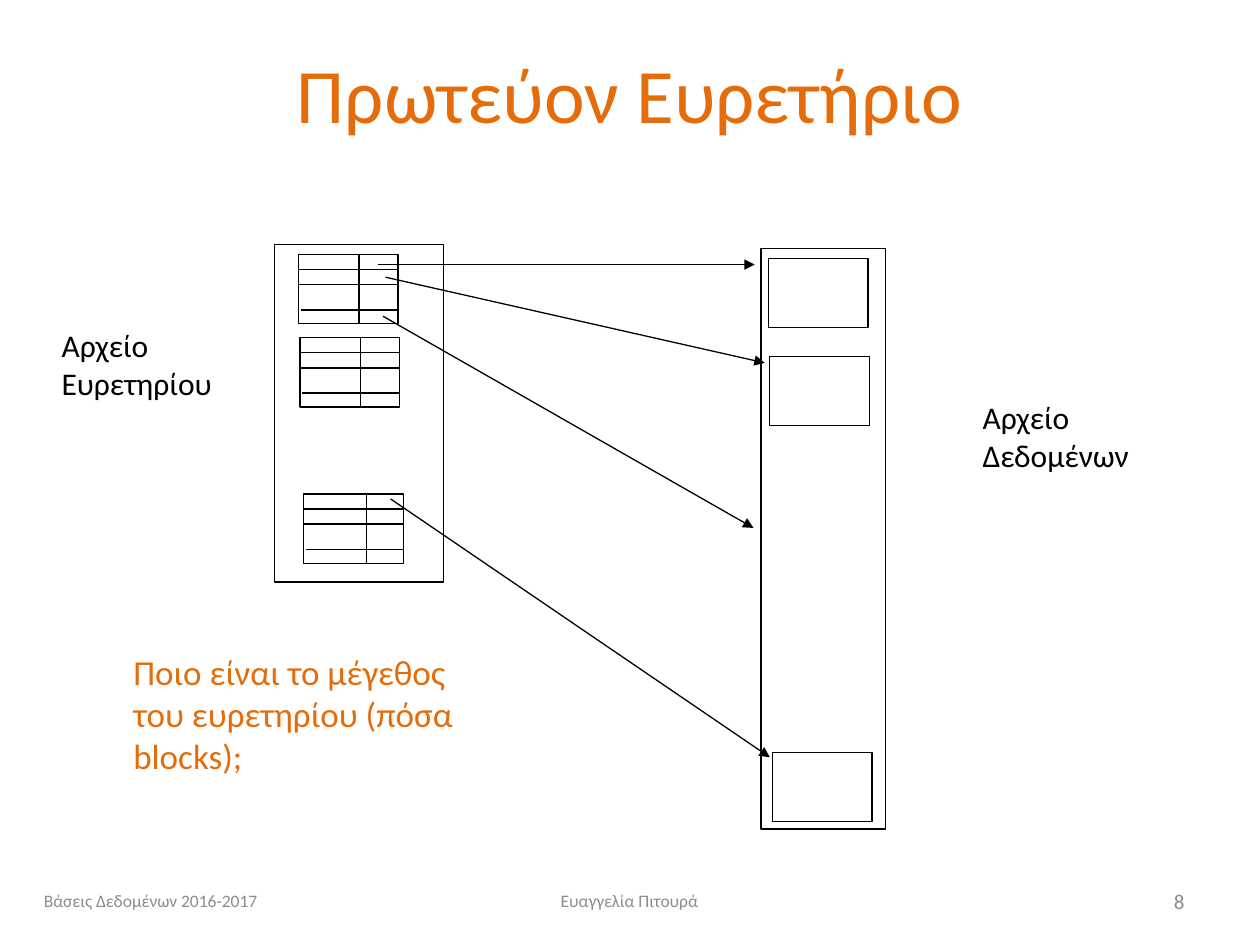
import pptx
import pptx.util
import pptx.dml.color
import pptx.enum.shapes
import pptx.enum.text
import pptx.oxml.ns
import pptx.oxml.xmlchemy
from pptx.util import Inches

COLORS = {"ink": "000000", "accent": "E46C0A", "footer": "8C8C8C"}
ALIGN = pptx.enum.text.PP_ALIGN
ANCHOR = pptx.enum.text.MSO_ANCHOR
BLOCK_W, BLOCK_H = 0.79, 0.55


class Deck:
    """Holds the drawing style and the current slide."""

    def __init__(self, slide, font="Calibri", weight=0.75):
        self.s = slide
        self.font = font
        self.weight = pptx.util.Pt(weight)

    def color(self, name):
        return pptx.dml.color.RGBColor.from_string(COLORS[name])

    def text(self, words, x, y, w, h, size, color="ink", align=ALIGN.LEFT, anchor=ANCHOR.TOP):
        sp = self.s.shapes.add_textbox(Inches(x), Inches(y), Inches(w), Inches(h))
        tf = sp.text_frame
        tf.word_wrap = True
        tf.vertical_anchor = anchor
        p = tf.paragraphs[0]
        p.text = words
        p.alignment = align
        p.font.name = self.font
        p.font.size = pptx.util.Pt(size)
        p.font.color.rgb = self.color(color)

    def box(self, x, y, w, h):
        kind = pptx.enum.shapes.MSO_SHAPE.RECTANGLE
        sp = self.s.shapes.add_shape(kind, Inches(x), Inches(y), Inches(w), Inches(h))
        sp.shadow.inherit = False
        sp.fill.background()
        sp.line.color.rgb = self.color("ink")
        sp.line.width = self.weight

    def line(self, x1, y1, x2, y2, arrow=False):
        kind = pptx.enum.shapes.MSO_CONNECTOR.STRAIGHT
        sp = self.s.shapes.add_connector(kind, Inches(x1), Inches(y1), Inches(x2), Inches(y2))
        sp.line.color.rgb = self.color("ink")
        sp.line.width = self.weight
        props = sp._element.spPr
        if arrow:
            tail = pptx.oxml.xmlchemy.OxmlElement("a:tailEnd")
            tail.set("type", "triangle")
            props.find(pptx.oxml.ns.qn("a:ln")).append(tail)
        props.append(pptx.oxml.xmlchemy.OxmlElement("a:effectLst"))

    def index_block(self, x, y, divider):
        self.box(x, y, BLOCK_W, BLOCK_H)
        for dx, dy in ((0, 0.12), (0, 0.24), (0.02, 0.44)):
            self.line(x + dx, y + dy, x + BLOCK_W, y + dy)
        self.line(divider, y, divider, y + BLOCK_H)


def main():
    prs = pptx.Presentation()
    prs.slide_width, prs.slide_height = Inches(10), Inches(7.5)
    deck = Deck(prs.slides.add_slide(prs.slide_layouts[6]))

    deck.text("Πρωτεύον Ευρετήριο", 0.5, 0.11, 9, 1.25, 44, "accent", ALIGN.CENTER, ANCHOR.MIDDLE)

    deck.box(2.18, 1.94, 1.34, 2.68)
    for x, y, divider in ((2.37, 2.02, 2.85), (2.38, 2.68, 2.86), (2.41, 3.92, 2.91)):
        deck.index_block(x, y, divider)

    deck.box(6.04, 1.97, 0.99, 4.61)
    for x, y in ((6.1, 2.05), (6.11, 2.83), (6.13, 5.97)):
        deck.box(x, y, BLOCK_W, BLOCK_H)

    for ends in (
        (3, 2.1, 5.99, 2.1),
        (3.06, 2.2, 6.07, 2.88),
        (3.04, 2.51, 5.98, 4.19),
        (3.1, 3.96, 6.11, 6.01),
    ):
        deck.line(*ends, arrow=True)

    deck.text("Αρχείο Ευρετηρίου", 0.39, 2.54, 2.12, 0.7, 18)
    deck.text("Αρχείο Δεδομένων", 7.7, 3.11, 1.64, 0.7, 18)
    question = "Ποιο είναι το μέγεθος του ευρετηρίου (πόσα blocks);"
    deck.text(question, 0.96, 5.11, 2.8, 1.11, 20, "accent")

    for words, x, w, size, align in (
        ("Βάσεις Δεδομένων 2016-2017", 0.25, 2.33, 10, ALIGN.LEFT),
        ("Ευαγγελία Πιτουρά", 3.41, 3.17, 10, ALIGN.CENTER),
        ("8", 7.17, 2.33, 12, ALIGN.RIGHT),
    ):
        deck.text(words, x, 6.95, w, 0.4, size, "footer", align, ANCHOR.MIDDLE)

    prs.save("out.pptx")


if __name__ == "__main__":
    main()
